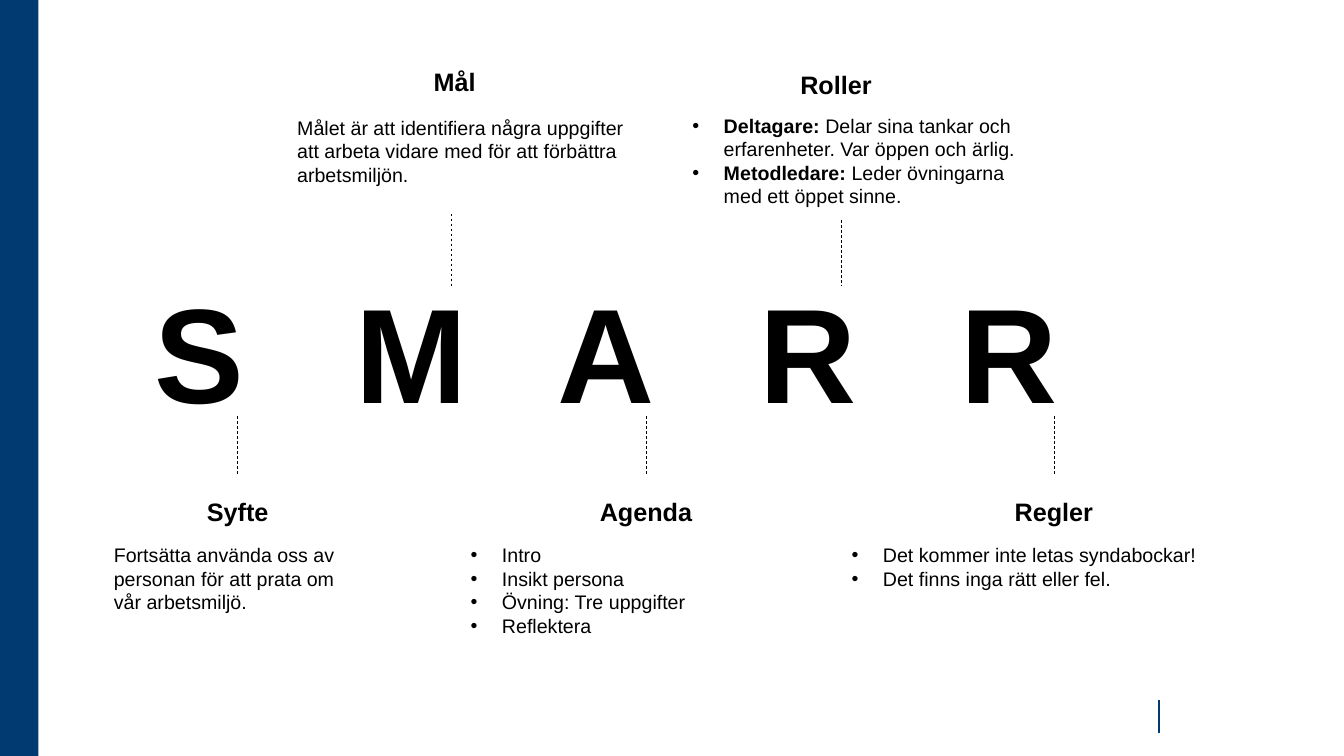
from lxml.etree import SubElement
from pptx import Presentation
from pptx.dml.color import RGBColor
from pptx.enum.dml import MSO_LINE
from pptx.enum.shapes import MSO_CONNECTOR, MSO_SHAPE
from pptx.enum.text import MSO_ANCHOR, MSO_AUTO_SIZE, PP_ALIGN
from pptx.oxml.ns import qn
from pptx.util import Cm, Pt

NAVY = RGBColor(0x00, 0x3A, 0x70)
BLACK = RGBColor(0x00, 0x00, 0x00)
LETTER_PITCH = 5.08
HEADING_WIDTH = 6
BULLET_INDENT = Cm(0.79)

# heading, heading centre, heading top, body left, body top, body width,
# line x, line top, line bottom, bulleted, paragraphs as (bold label, text)
SECTIONS = [
    ("Syfte", 5.99, 12.37, 2.62, 13.56, 8.18, 5.97, 10.49, 11.94, False,
     [("", "Fortsätta använda oss av personan för att prata om \nvår arbetsmiljö.")]),
    ("Mål", 11.46, 1.55, 7.24, 2.79, 8.81, 11.38, 5.38, 7.21, False,
     [("", "Målet är att identifiera några uppgifter\n"
           "att arbeta vidare med för att förbättra arbetsmiljön.")]),
    ("Agenda", 16.28, 12.37, 11.61, 13.56, 9.78, 16.28, 10.49, 11.94, True,
     [("", "Intro"), ("", "Insikt persona"),
      ("", "Övning: Tre uppgifter"), ("", "Reflektera")]),
    ("Roller", 21.07, 1.63, 17.2, 2.74, 9.42, 21.21, 5.54, 7.21, True,
     [("Deltagare: ", "Delar sina tankar och erfarenheter. Var öppen och ärlig."),
      ("Metodledare: ", "Leder övningarna med ett öppet sinne.")]),
    ("Regler", 26.56, 12.37, 21.21, 13.56, 10.95, 26.57, 10.49, 11.94, True,
     [("", "Det kommer inte letas syndabockar!"),
      ("", "Det finns inga rätt eller fel.")]),
]


def set_font(paragraph, size, bold):
    font = paragraph.font
    font.name, font.size, font.bold = "Arial", Pt(size), bold
    font.color.rgb = BLACK


def add_vertical_line(x, top, bottom, color, width):
    line = slide.shapes.add_connector(
        MSO_CONNECTOR.STRAIGHT, Cm(x), Cm(top), Cm(x), Cm(bottom))
    line.line.color.rgb = color
    line.line.width = Pt(width)
    SubElement(line._element.spPr, qn("a:effectLst"))
    return line


prs = Presentation()
prs.slide_width, prs.slide_height = Cm(33.87), Cm(19.05)
slide = prs.slides.add_slide(prs.slide_layouts[5])

# Side bar and footer mark
side_bar = slide.shapes.add_shape(MSO_SHAPE.RECTANGLE, 0, 0, Cm(0.97), prs.slide_height)
side_bar.shadow.inherit = False
side_bar.fill.solid()
side_bar.fill.fore_color.rgb = NAVY
side_bar.line.fill.background()
add_vertical_line(29.21, 17.63, 18.47, NAVY, 1.5)

# Acronym, one letter per tab stop
acronym = slide.shapes.title
acronym.left, acronym.top, acronym.width, acronym.height = Cm(3.89), Cm(6.63), Cm(25), Cm(4.37)
acronym_frame = acronym.text_frame
acronym_frame.margin_left = acronym_frame.margin_right = 0
acronym_frame.auto_size = MSO_AUTO_SIZE.NONE
acronym_frame.vertical_anchor = MSO_ANCHOR.MIDDLE
letters = acronym_frame.paragraphs[0]
letters.text = "\t".join("SMARR")
letters.alignment = PP_ALIGN.LEFT
tab_stops = SubElement(letters._p.get_or_add_pPr(), qn("a:tabLst"))
for step in range(1, 5):
    SubElement(tab_stops, qn("a:tab"), pos=str(Cm(step * LETTER_PITCH)), algn="l")
set_font(letters, 96, True)

# One heading, body and dashed line for each letter
for (name, centre, heading_top, body_left, body_top, body_width,
     line_x, line_top, line_bottom, bulleted, items) in SECTIONS:
    heading = slide.shapes.add_textbox(
        Cm(centre - HEADING_WIDTH / 2), Cm(heading_top), Cm(HEADING_WIDTH), Cm(1.02))
    heading.text_frame.word_wrap = True
    heading_line = heading.text_frame.paragraphs[0]
    heading_line.text = name
    heading_line.alignment = PP_ALIGN.CENTER
    set_font(heading_line, 18, True)

    body = slide.shapes.add_textbox(
        Cm(body_left), Cm(body_top), Cm(body_width), Cm(2.64)).text_frame
    body.word_wrap = True
    for index, (label, text) in enumerate(items):
        item = body.add_paragraph() if index else body.paragraphs[0]
        if label:
            label_run = item.add_run()
            label_run.text = label
            label_run.font.bold = True
            item.add_run().text = text
        else:
            item.text = text
        if bulleted:
            props = item._p.get_or_add_pPr()
            props.set("marL", str(BULLET_INDENT))
            props.set("indent", str(-BULLET_INDENT))
            SubElement(props, qn("a:buFont"), typeface="Arial")
            SubElement(props, qn("a:buChar"), char="•")
        set_font(item, 14, False)

    dashed = add_vertical_line(line_x, line_top, line_bottom, BLACK, 0.5)
    dashed.line.dash_style = MSO_LINE.DASH

prs.save("out.pptx")
